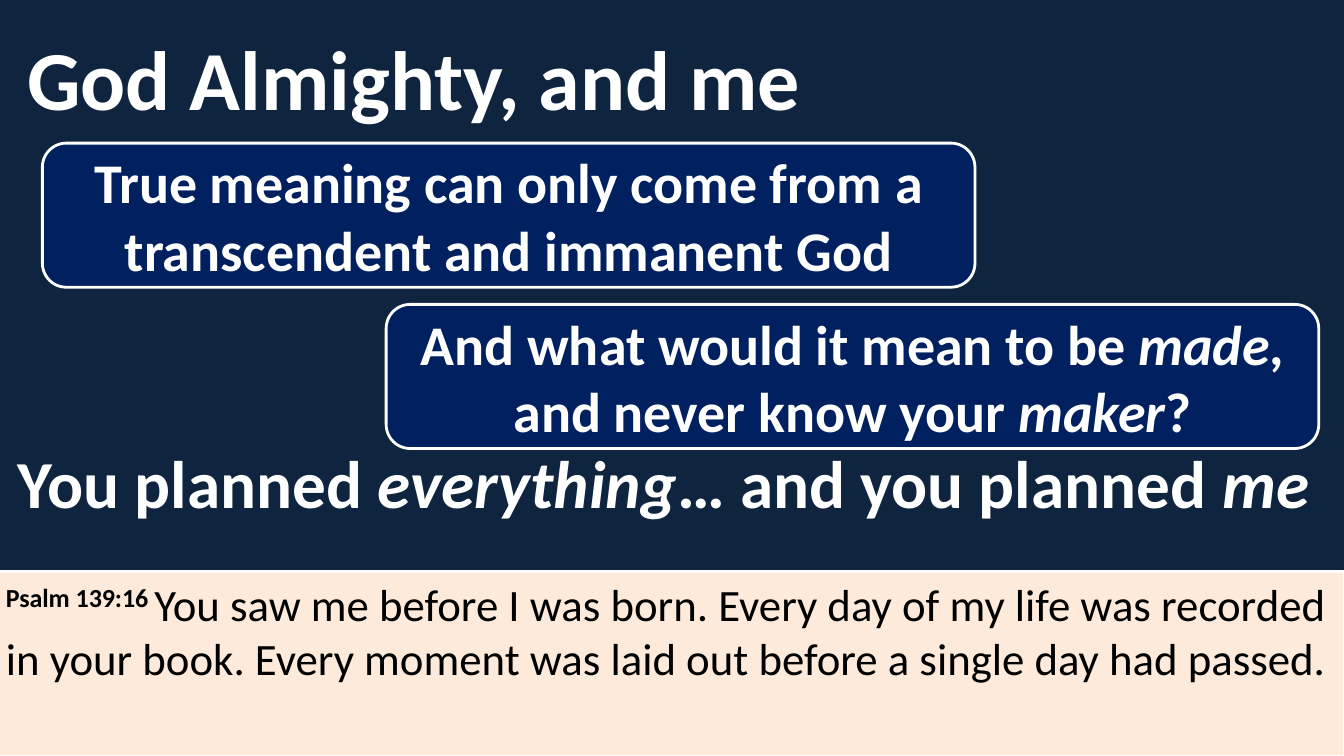
import pptx
import pptx.dml.color
import pptx.enum.shapes
import pptx.enum.text
import pptx.util

SHAPES = pptx.enum.shapes.MSO_SHAPE
ALIGN = pptx.enum.text.PP_ALIGN
ANCHOR = pptx.enum.text.MSO_ANCHOR
NAVY, BLUE, PEACH, WHITE, BLACK = "0F243E", "002060", "FDEADA", "FFFFFF", "000000"


def paint(color_owner, color):
    """Fill a FillFormat with a solid hex colour."""
    color_owner.solid()
    color_owner.fore_color.rgb = pptx.dml.color.RGBColor.from_string(color)


def inches(box):
    """Convert a left, top, width, height box to lengths."""
    return [pptx.util.Inches(value) for value in box]


def write(frame, pieces, size, color=WHITE, bold=True, align=ALIGN.LEFT, anchor=ANCHOR.MIDDLE):
    """Write one paragraph of (text, italic) pieces and return it."""
    frame.word_wrap = True
    frame.auto_size = pptx.enum.text.MSO_AUTO_SIZE.NONE
    frame.vertical_anchor = anchor
    paragraph = frame.paragraphs[0]
    paragraph.alignment = align
    font = paragraph.font
    font.name, font.size, font.bold = "Calibri", pptx.util.Pt(size), bold
    paint(font.fill, color)
    for text, italic in pieces:
        run = paragraph.add_run()
        run.text = text
        if italic:
            run.font.italic = True
    return paragraph


def add_panel(slide, box, kind, fill, line_width):
    """Add a filled panel with a white outline."""
    panel = slide.shapes.add_shape(kind, *inches(box))
    panel.shadow.inherit = False
    paint(panel.fill, fill)
    paint(panel.line.fill, WHITE)
    panel.line.width = pptx.util.Pt(line_width)
    return panel


def add_heading(slide, box, text):
    """Place the slide title in its placeholder."""
    heading = slide.shapes.title
    heading.left, heading.top, heading.width, heading.height = inches(box)
    write(heading.text_frame, [(text, False)], 60)


def add_verse(slide, box, reference, passage):
    """Add the scripture band with a raised bold reference."""
    band = add_panel(slide, box, SHAPES.RECTANGLE, PEACH, 1.5)
    pieces = [(reference, False), (passage, False)]
    verse = write(band.text_frame, pieces, 32, BLACK, False, anchor=ANCHOR.TOP)
    reference_font = verse.runs[0].font
    reference_font.bold = True
    reference_font._element.set("baseline", "30000")


def add_statement(slide, box, pieces):
    """Add the large statement above the scripture band."""
    statement = slide.shapes.add_textbox(*inches(box))
    write(statement.text_frame, pieces, 48)


def add_callout(slide, box, pieces):
    """Add a rounded callout with centred text."""
    callout = add_panel(slide, box, SHAPES.ROUNDED_RECTANGLE, BLUE, 2)
    write(callout.text_frame, pieces, 40, align=ALIGN.CENTER)


def main():
    """Build and save the slide."""
    deck = pptx.Presentation()
    deck.slide_width, deck.slide_height = pptx.util.Inches(13.33), pptx.util.Inches(7.5)
    slide = deck.slides.add_slide(deck.slide_layouts[5])
    paint(slide.background.fill, NAVY)

    add_heading(slide, (0.17, 0.14, 7.92, 1.25), "God Almighty, and me")
    add_verse(slide, (-0.04, 5.67, 13.37, 1.83), "Psalm 139:16\u00a0",
              "You saw me before I was born. Every day of my life was recorded in your book. "
              "Every moment was laid out before a single day had passed.")
    add_statement(slide, (0.08, 4.15, 13.37, 1.25), [
        ("You planned ", False), ("everything", True),
        ("… and you planned ", False), ("me", True)])
    add_callout(slide, (0.42, 1.42, 9.25, 1.43), [
        ("True meaning can only come from a transcendent and immanent God", False)])
    add_callout(slide, (3.83, 3.02, 9.25, 1.43), [
        ("And what would it mean to be ", False), ("made", True),
        (", and never know your ", False), ("maker", True), ("?", False)])
    deck.save("out.pptx")


if __name__ == "__main__":
    main()
